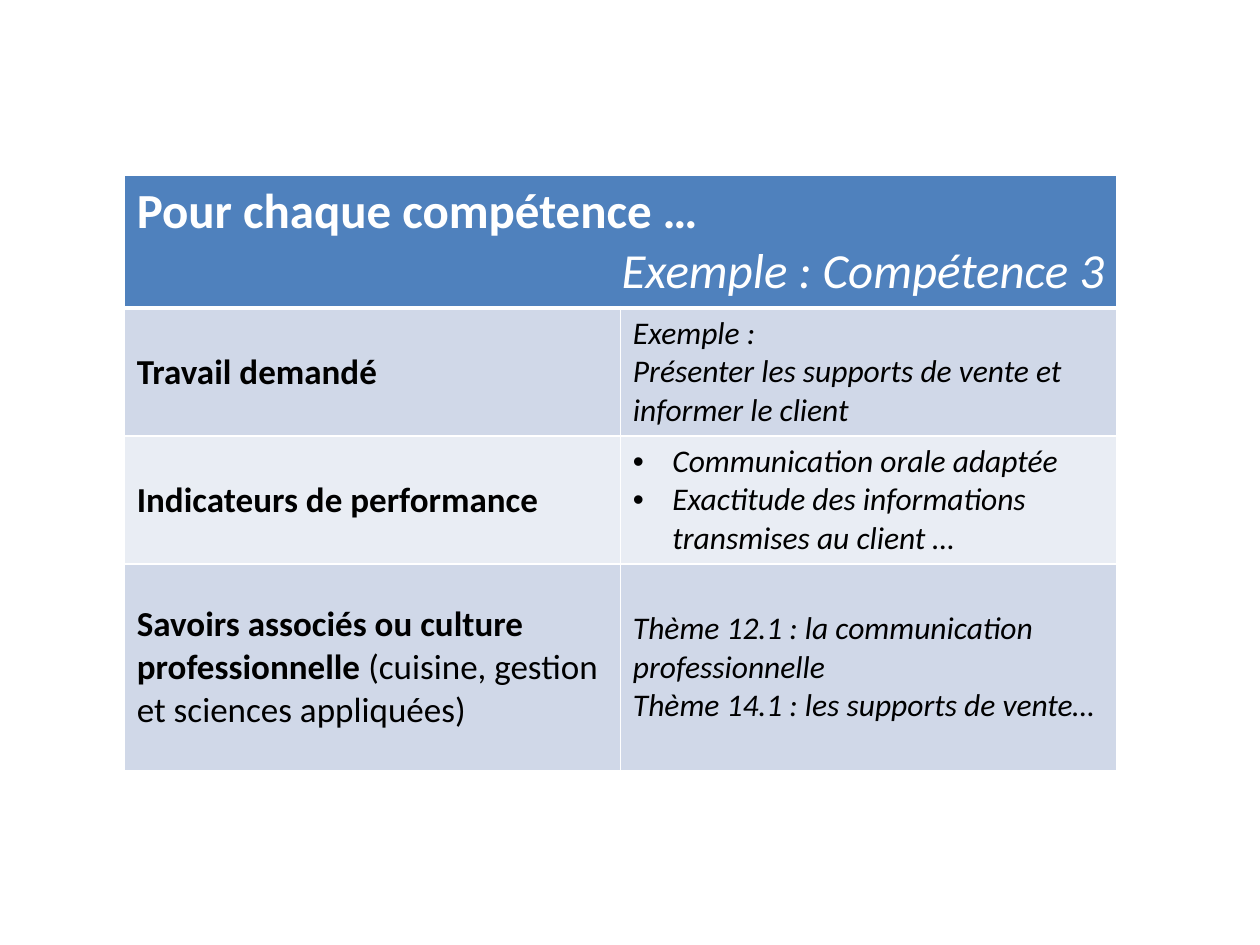
import pptx
import pptx.util
import pptx.dml.color
import pptx.enum.text
import pptx.oxml.ns
import lxml.etree
from dataclasses import dataclass


@dataclass(frozen=True)
class Theme:
    font: str = "Calibri"
    header_fill: str = "4F81BD"
    bands: tuple = ("D0D8E8", "E9EDF4")
    border: str = "FFFFFF"
    header_text: str = "FFFFFF"
    body_text: str = "000000"
    header_size: int = 28
    label_size: int = 20
    example_size: int = 18


THEME = Theme()
Pt = pptx.util.Pt

HEADING = "Pour chaque compétence …"
HEADING_EXAMPLE = "Exemple : Compétence 3"
ROWS = [
    {"label": "Travail demandé",
     "examples": ["Exemple :", "Présenter les supports de vente et informer le client"]},
    {"label": "Indicateurs de performance", "bulleted": True,
     "examples": ["Communication orale adaptée",
                  "Exactitude des informations transmises au client …"]},
    {"label": "Savoirs associés ou culture professionnelle ",
     "detail": "(cuisine, gestion et sciences appliquées)",
     "examples": ["Thème 12.1 : la communication professionnelle",
                  "Thème 14.1 : les supports de vente…"]},
]

LEFT, TOP = 71, 100.4
COLUMN_WIDTH = 283.5
ROW_HEIGHTS = [68.4, 68.4, 68.4, 118]
BULLET_INDENT = 22.5


def rgb(value):
    return pptx.dml.color.RGBColor.from_string(value)


def add_element(parent, tag, **attributes):
    return lxml.etree.SubElement(parent, pptx.oxml.ns.qn(tag), attributes)


def style_cell(cell, fill, bottom_width=1):
    properties = cell._tc.get_or_add_tcPr()
    for side, width in (("L", 1), ("R", 1), ("T", 1), ("B", bottom_width)):
        line = add_element(properties, "a:ln" + side, w=str(Pt(width)))
        add_element(add_element(line, "a:solidFill"), "a:srgbClr", val=THEME.border)
    cell.fill.solid()
    cell.fill.fore_color.rgb = rgb(fill)


def add_bullet(paragraph):
    properties = paragraph._p.get_or_add_pPr()
    properties.set("marL", str(Pt(BULLET_INDENT)))
    properties.set("indent", str(Pt(-BULLET_INDENT)))
    add_element(properties, "a:buFont", typeface="Arial")
    add_element(properties, "a:buChar", char="•")


def format_run(run, size, color, bold=False, italic=False):
    run.font.name = THEME.font
    run.font.size = Pt(size)
    run.font.color.rgb = rgb(color)
    run.font.bold = bold
    run.font.italic = italic


def fill_heading(table):
    heading = table.cell(0, 0)
    heading.merge(table.cell(0, 1))
    for column in range(2):
        style_cell(table.cell(0, column), THEME.header_fill, bottom_width=3)
    heading.text_frame.text = HEADING + "\n" + HEADING_EXAMPLE
    title, example = heading.text_frame.paragraphs
    example.alignment = pptx.enum.text.PP_ALIGN.RIGHT
    format_run(title.runs[0], THEME.header_size, THEME.header_text, bold=True)
    format_run(example.runs[0], THEME.header_size, THEME.header_text, italic=True)


def fill_row(table, index, content):
    label, examples = table.cell(index, 0), table.cell(index, 1)
    for cell in (label, examples):
        style_cell(cell, THEME.bands[(index - 1) % 2])
        cell.vertical_anchor = pptx.enum.text.MSO_ANCHOR.MIDDLE

    label.text_frame.text = content["label"]
    label_line = label.text_frame.paragraphs[0]
    format_run(label_line.runs[0], THEME.label_size, THEME.body_text, bold=True)
    if "detail" in content:
        detail = label_line.add_run()
        detail.text = content["detail"]
        format_run(detail, THEME.label_size, THEME.body_text)

    examples.text_frame.text = "\n".join(content["examples"])
    for paragraph in examples.text_frame.paragraphs:
        if content.get("bulleted"):
            add_bullet(paragraph)
        format_run(paragraph.runs[0], THEME.example_size, THEME.body_text, italic=True)


def main():
    presentation = pptx.Presentation()
    presentation.slide_width, presentation.slide_height = Pt(720), Pt(540)
    slide = presentation.slides.add_slide(presentation.slide_layouts[6])
    table = slide.shapes.add_table(
        len(ROWS) + 1, 2, Pt(LEFT), Pt(TOP),
        Pt(2 * COLUMN_WIDTH), Pt(sum(ROW_HEIGHTS))).table
    for column in table.columns:
        column.width = Pt(COLUMN_WIDTH)
    for row, height in zip(table.rows, ROW_HEIGHTS):
        row.height = Pt(height)
    fill_heading(table)
    for index, content in enumerate(ROWS, start=1):
        fill_row(table, index, content)
    presentation.save("out.pptx")


if __name__ == "__main__":
    main()
